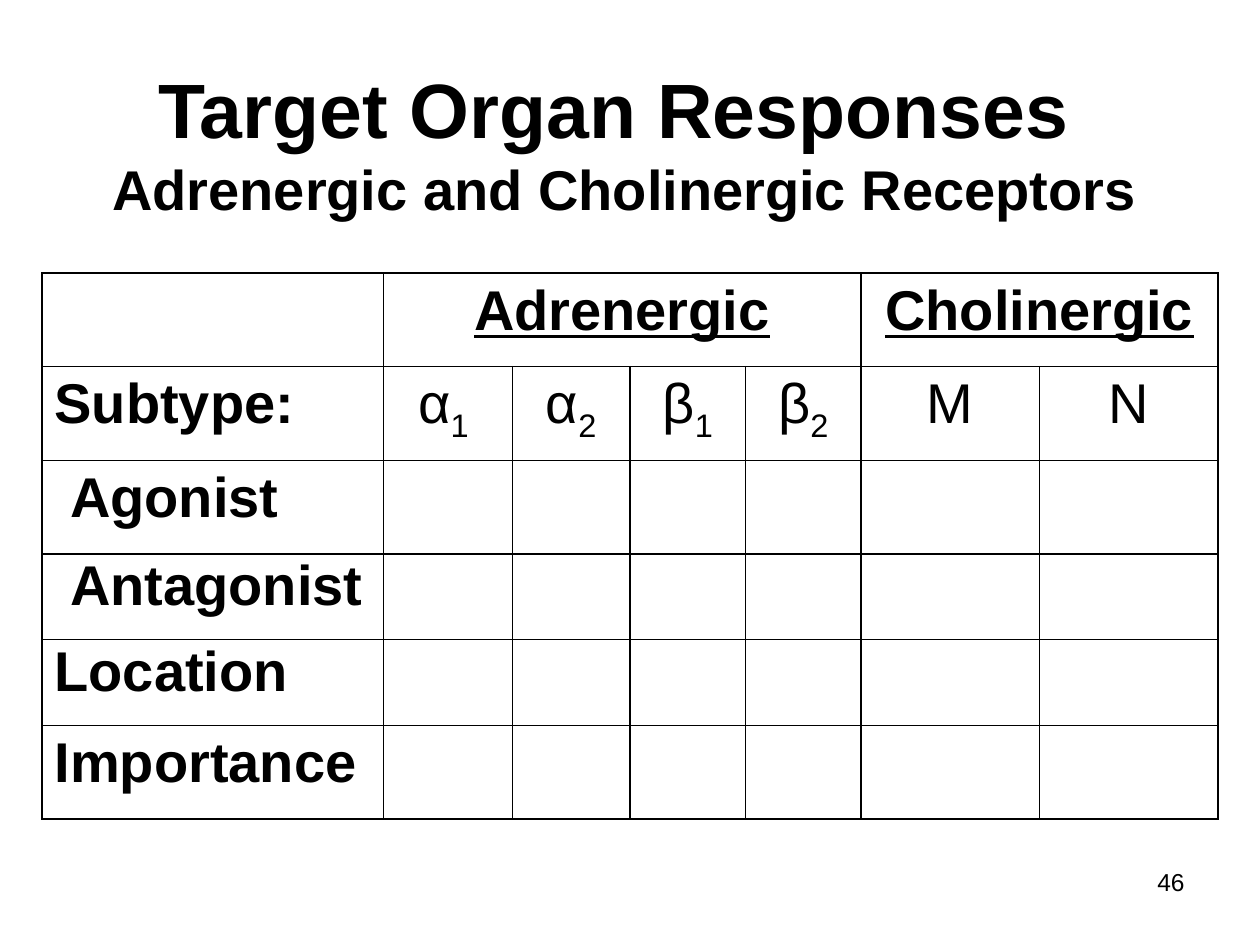
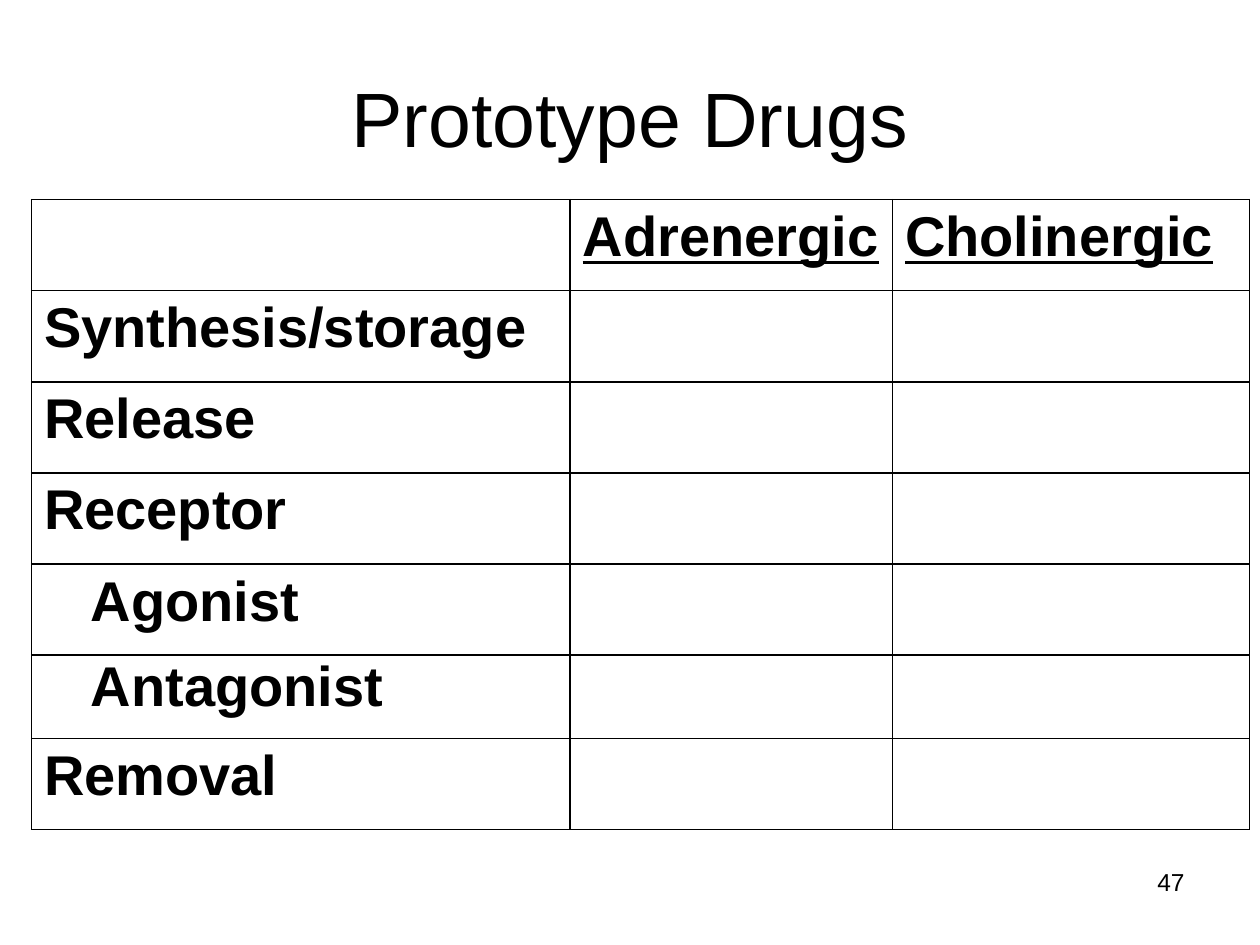
from dataclasses import dataclass

from lxml.etree import SubElement
from pptx import Presentation
from pptx.dml.color import RGBColor
from pptx.enum.text import MSO_ANCHOR, MSO_AUTO_SIZE, PP_ALIGN
from pptx.oxml.ns import qn
from pptx.util import Inches, Length, Pt

INK = RGBColor(0x00, 0x00, 0x00)
PAPER = RGBColor(0xFF, 0xFF, 0xFF)
FONT = "Arial"
WIDE, HIGH = Inches(10), Inches(7.5)
COLS, ROWS = 120, 90  # grid of the slide
BODY = 32
PAD = 1.2  # left margin of a cell, in grid columns


@dataclass(frozen=True)
class Box:
    left: float
    top: float
    width: float
    height: float

    def place(self) -> tuple[Length, ...]:
        return (across(self.left), down(self.top),
                across(self.width), down(self.height))


@dataclass(frozen=True)
class Label:
    row: int
    col: int
    text: str
    sub: str = ""
    bold: bool = True
    under: bool = False
    mid: bool = False
    indent: float = 0
    tight: bool = False
    span: int = 1


@dataclass(frozen=True)
class Line:
    text: str
    size: int
    bold: bool


@dataclass(frozen=True)
class Page:
    number: int
    title: tuple[Line, ...]
    head: Box
    grid: Box
    cols: tuple[float, ...]
    rows: tuple[float, ...]
    labels: tuple[Label, ...]


NUMBER = Box(86, 82, 28, 6.25)
TYPES = (("α", "1 "), ("α", "2"), ("β", "1"), ("β", "2"), ("M", ""), ("N", ""))

RECEPTORS = Page(
    46,
    (Line("Target Organ Responses ", 44, True),
     Line("Adrenergic and Cholinergic Receptors", BODY, True)),
    Box(3, 4, 113, 19),
    Box(4, 26, 112, 52),
    (32.5, 12.3, 11.2, 11, 11, 17, 17),
    (8.92, 8.92, 8.92, 8.16, 8.16, 8.92),
    (Label(0, 1, "Adrenergic", under=True, mid=True, span=4),
     Label(0, 5, "Cholinergic", under=True, mid=True, span=2),
     Label(1, 0, "Subtype:"),
     *(Label(1, col, text, sub, bold=False, mid=True)
       for col, (text, sub) in enumerate(TYPES, 1)),
     Label(2, 0, "Agonist", indent=1.48),
     Label(3, 0, "Antagonist", indent=1.48, tight=True),
     Label(4, 0, "Location", tight=True),
     Label(5, 0, "Importance")),
)

DRUGS = Page(
    47,
    (Line("Prototype Drugs", 44, False),),
    Box(6, 3.6, 108, 15),
    Box(3, 19, 116, 60),
    (51.3, 30.7, 34),
    (8.68,) * 5 + (7.92, 8.68),
    (Label(0, 1, "Adrenergic", under=True),
     Label(0, 2, "Cholinergic", under=True),
     Label(1, 0, "Synthesis/storage"),
     Label(2, 0, "Release"),
     Label(3, 0, "Receptor"),
     Label(4, 0, "Agonist", indent=4.45),
     Label(5, 0, "Antagonist", indent=4.45, tight=True),
     Label(6, 0, "Removal")),
)


def across(cols: float) -> Length:
    return Length(round(WIDE * cols / COLS))


def down(rows: float) -> Length:
    return Length(round(HIGH * rows / ROWS))


def style(run, size: int, bold: bool = False, under: bool = False) -> None:
    font = run.font
    font.name, font.size = FONT, Pt(size)
    font.bold, font.underline = bold, under
    font.color.rgb = INK


def add_title(slide, page: Page) -> None:
    title = slide.shapes.title
    title.left, title.top, title.width, title.height = page.head.place()
    frame = title.text_frame
    frame.auto_size = MSO_AUTO_SIZE.NONE
    frame.vertical_anchor = MSO_ANCHOR.MIDDLE
    para = frame.paragraphs[0]
    para.text = "\v".join(line.text for line in page.title)
    para.alignment = PP_ALIGN.CENTER
    for run, line in zip(para.runs, page.title):
        style(run, line.size, line.bold)


def add_number(slide, number: int) -> None:
    frame = slide.shapes.add_textbox(*NUMBER.place()).text_frame
    frame.word_wrap = True
    para = frame.paragraphs[0]
    para.text = str(number)
    para.alignment = PP_ALIGN.RIGHT
    style(para.runs[0], 14)


def rule(cell) -> None:
    """Give the cell thin lines on all sides and a plain fill."""
    props = cell._tc.get_or_add_tcPr()
    for side in ("lnL", "lnR", "lnT", "lnB"):
        edge = SubElement(props, qn(f"a:{side}"), w=str(Pt(1)))
        fill = SubElement(edge, qn("a:solidFill"))
        SubElement(fill, qn("a:srgbClr"), val=str(INK))
    cell.fill.solid()
    cell.fill.fore_color.rgb = PAPER


def write(table, label: Label) -> None:
    cell = table.cell(label.row, label.col)
    if label.span > 1:
        cell.merge(table.cell(label.row, label.col + label.span - 1))
    cell.margin_left = across(PAD + label.indent)
    para = cell.text_frame.paragraphs[0]
    para.text = label.text
    para.alignment = PP_ALIGN.CENTER if label.mid else PP_ALIGN.LEFT
    if label.tight:
        para.line_spacing = 0.9
    if label.sub:
        low = para.add_run()
        low.text = label.sub
        low._r.get_or_add_rPr().set("baseline", "-25000")
    for run in para.runs:
        style(run, BODY, label.bold, label.under)


def add_grid(slide, page: Page) -> None:
    table = slide.shapes.add_table(
        len(page.rows), len(page.cols), *page.grid.place()).table
    table.first_row = table.horz_banding = False
    for col, width in zip(table.columns, page.cols):
        col.width = across(width)
    for row, height in zip(table.rows, page.rows):
        row.height = down(height)
    for cell in table.iter_cells():
        rule(cell)
    for label in page.labels:
        write(table, label)


def main() -> None:
    deck = Presentation()
    deck.slide_width, deck.slide_height = WIDE, HIGH
    plain = deck.slide_layouts.get_by_name("Title Only")
    for page in (RECEPTORS, DRUGS):
        slide = deck.slides.add_slide(plain)
        add_title(slide, page)
        add_number(slide, page.number)
        add_grid(slide, page)
    deck.save("out.pptx")


if __name__ == "__main__":
    main()
